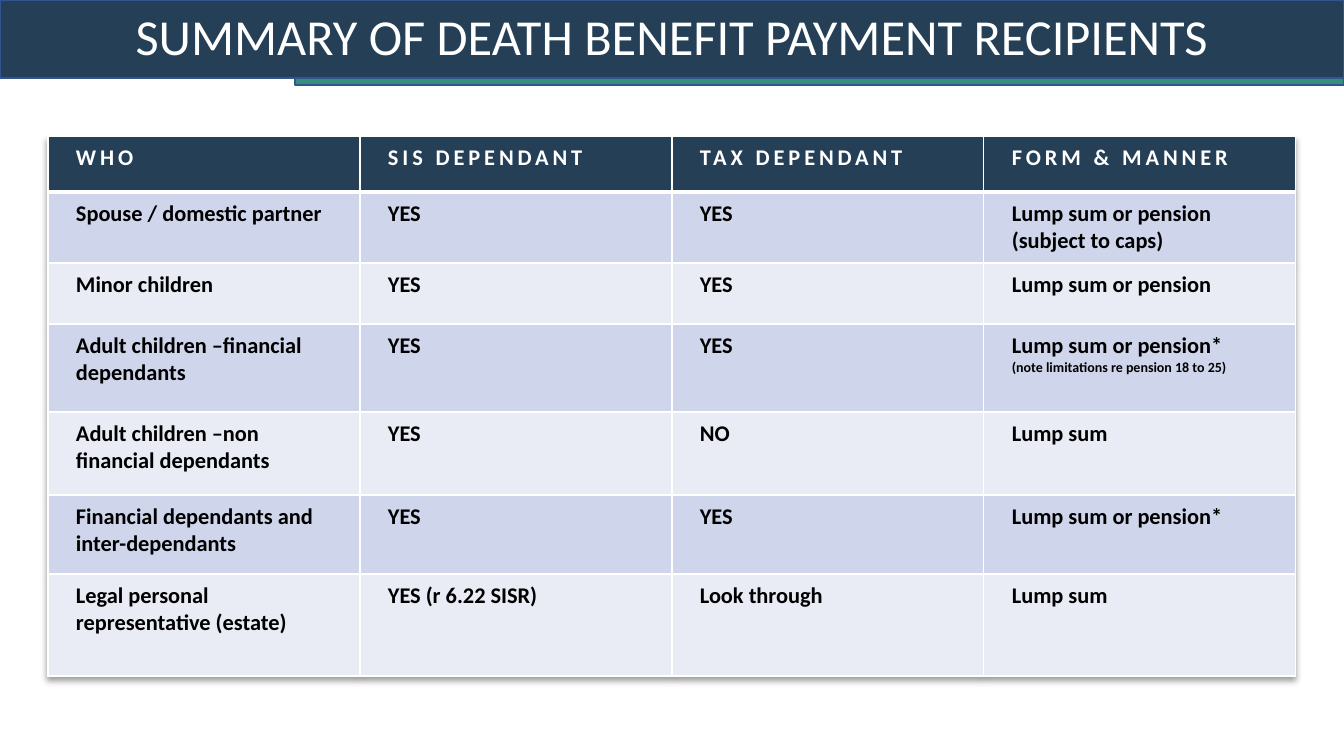
import dataclasses

import lxml.etree
import pptx
import pptx.dml.color
import pptx.enum.shapes
import pptx.enum.text
import pptx.oxml
import pptx.oxml.ns
import pptx.shapes.autoshape
import pptx.slide
import pptx.table
import pptx.util

SLIDE_WIDTH, SLIDE_HEIGHT = 1344, 756
EMU_PER_PX = 12192000 / SLIDE_WIDTH
FONT = "Calibri"
NAVY, TEAL, BAR_LINE = "254056", "368E7D", "325491"
WHITE, BLACK = "FFFFFF", "000000"
BAND_FILLS = ("CFD5EA", "E9EBF5")
HEADER_HEIGHT = 56
COLUMN_WIDTH = 312
HEADINGS = ("WHO", "SIS DEPENDANT", "TAX DEPENDANT", "FORM & MANNER")


@dataclasses.dataclass(frozen=True)
class Bar:
    left: int
    top: int
    width: int
    height: int
    fill: str


@dataclasses.dataclass(frozen=True)
class Recipient:
    height: int
    who: str
    sis: str
    tax: str
    form: str
    note: str = ""


@dataclasses.dataclass(frozen=True)
class CellStyle:
    fill: str
    color: str
    spacing: int = 0
    bottom_border: int = 1


TITLE_BAR = Bar(0, 0, SLIDE_WIDTH, 78, NAVY)
ACCENT_BAR = Bar(295, 78, SLIDE_WIDTH - 295, 7, TEAL)
HEADING_STYLE = CellStyle(NAVY, WHITE, spacing=280, bottom_border=3)
RECIPIENTS = (
    Recipient(71, "Spouse / domestic partner", "YES", "YES",
              "Lump sum or pension (subject to caps)"),
    Recipient(61, "Minor children", "YES", "YES", "Lump sum or pension"),
    Recipient(88, "Adult children –financial dependants", "YES", "YES",
              "Lump sum or pension*", "(note limitations re pension 18 to 25)"),
    Recipient(83, "Adult children –non financial dependants", "YES", "NO", "Lump sum"),
    Recipient(79, "Financial dependants and inter-dependants", "YES", "YES",
              "Lump sum or pension*"),
    Recipient(102, "Legal personal representative (estate)", "YES (r 6.22 SISR)",
              "Look through", "Lump sum"),
)


def px(length: int) -> pptx.util.Emu:
    return pptx.util.Emu(round(length * EMU_PER_PX))


def rgb(value: str) -> pptx.dml.color.RGBColor:
    return pptx.dml.color.RGBColor.from_string(value)


def add_bar(slide: pptx.slide.Slide, bar: Bar) -> pptx.shapes.autoshape.Shape:
    shape = slide.shapes.add_shape(
        pptx.enum.shapes.MSO_SHAPE.RECTANGLE,
        px(bar.left), px(bar.top), px(bar.width), px(bar.height))
    shape.shadow.inherit = False
    shape.fill.solid()
    shape.fill.fore_color.rgb = rgb(bar.fill)
    shape.line.color.rgb = rgb(BAR_LINE)
    shape.line.width = pptx.util.Pt(1)
    return shape


def add_title(slide: pptx.slide.Slide, text: str) -> None:
    title = slide.shapes.add_textbox(
        px(TITLE_BAR.left), px(TITLE_BAR.top), px(TITLE_BAR.width), px(TITLE_BAR.height))
    frame = title.text_frame
    frame.word_wrap = True
    frame.vertical_anchor = pptx.enum.text.MSO_ANCHOR.MIDDLE
    paragraph = frame.paragraphs[0]
    paragraph.text = text
    paragraph.alignment = pptx.enum.text.PP_ALIGN.CENTER
    paragraph.line_spacing = 0.9
    paragraph.font.name = FONT
    paragraph.font.size = pptx.util.Pt(36)
    paragraph.font.color.rgb = rgb(WHITE)


def add_border(cell: pptx.table._Cell, side: str, points: int) -> None:
    properties = cell._tc.get_or_add_tcPr()
    line = lxml.etree.SubElement(
        properties, pptx.oxml.ns.qn(f"a:ln{side}"), w=str(pptx.util.Pt(points)))
    fill = lxml.etree.SubElement(line, pptx.oxml.ns.qn("a:solidFill"))
    lxml.etree.SubElement(fill, pptx.oxml.ns.qn("a:srgbClr"), val=WHITE)


def fill_cell(cell: pptx.table._Cell, text: str, style: CellStyle, top_border: int) -> None:
    cell.margin_left, cell.margin_right = px(28), px(31)
    cell.margin_top = cell.margin_bottom = px(8)
    for side, points in (("L", 1), ("R", 1), ("T", top_border), ("B", style.bottom_border)):
        add_border(cell, side, points)
    cell.fill.solid()
    cell.fill.fore_color.rgb = rgb(style.fill)
    cell.text = text
    for paragraph, size in zip(cell.text_frame.paragraphs, (16, 10)):
        paragraph.font.name = FONT
        paragraph.font.size = pptx.util.Pt(size)
        paragraph.font.bold = True
        paragraph.font.color.rgb = rgb(style.color)
        if style.spacing:
            for run in paragraph.runs:
                run._r.get_or_add_rPr().set("spc", str(style.spacing))


def add_table_shadow(table: pptx.table.Table) -> None:
    effects = pptx.oxml.parse_xml(
        f'<a:effectLst {pptx.oxml.ns.nsdecls("a")}>'
        '<a:outerShdw blurRad="50800" dist="38100" dir="5400000" algn="t" rotWithShape="0">'
        f'<a:srgbClr val="{BLACK}"><a:alpha val="40000"/></a:srgbClr>'
        '</a:outerShdw></a:effectLst>')
    table._tbl.tblPr.insert(0, effects)


def add_recipient_table(slide: pptx.slide.Slide) -> None:
    heights = [HEADER_HEIGHT] + [recipient.height for recipient in RECIPIENTS]
    table = slide.shapes.add_table(
        len(heights), len(HEADINGS), px(48), px(136),
        px(COLUMN_WIDTH * len(HEADINGS)), px(sum(heights))).table
    add_table_shadow(table)
    for column in table.columns:
        column.width = px(COLUMN_WIDTH)
    for row, height in zip(table.rows, heights):
        row.height = px(height)
    for cell, heading in zip(table.rows[0].cells, HEADINGS):
        fill_cell(cell, heading, HEADING_STYLE, 1)
    for index, recipient in enumerate(RECIPIENTS):
        style = CellStyle(BAND_FILLS[index % 2], BLACK)
        top_border = 1 if index else HEADING_STYLE.bottom_border
        form = "\n".join(filter(None, (recipient.form, recipient.note)))
        texts = (recipient.who, recipient.sis, recipient.tax, form)
        for cell, text in zip(table.rows[index + 1].cells, texts):
            fill_cell(cell, text, style, top_border)


def main() -> None:
    presentation = pptx.Presentation()
    presentation.slide_width = px(SLIDE_WIDTH)
    presentation.slide_height = px(SLIDE_HEIGHT)
    slide = presentation.slides.add_slide(presentation.slide_layouts[6])
    for bar in (TITLE_BAR, ACCENT_BAR):
        add_bar(slide, bar)
    add_title(slide, "SUMMARY OF DEATH BENEFIT PAYMENT RECIPIENTS")
    add_recipient_table(slide)
    presentation.save("out.pptx")


if __name__ == "__main__":
    main()
